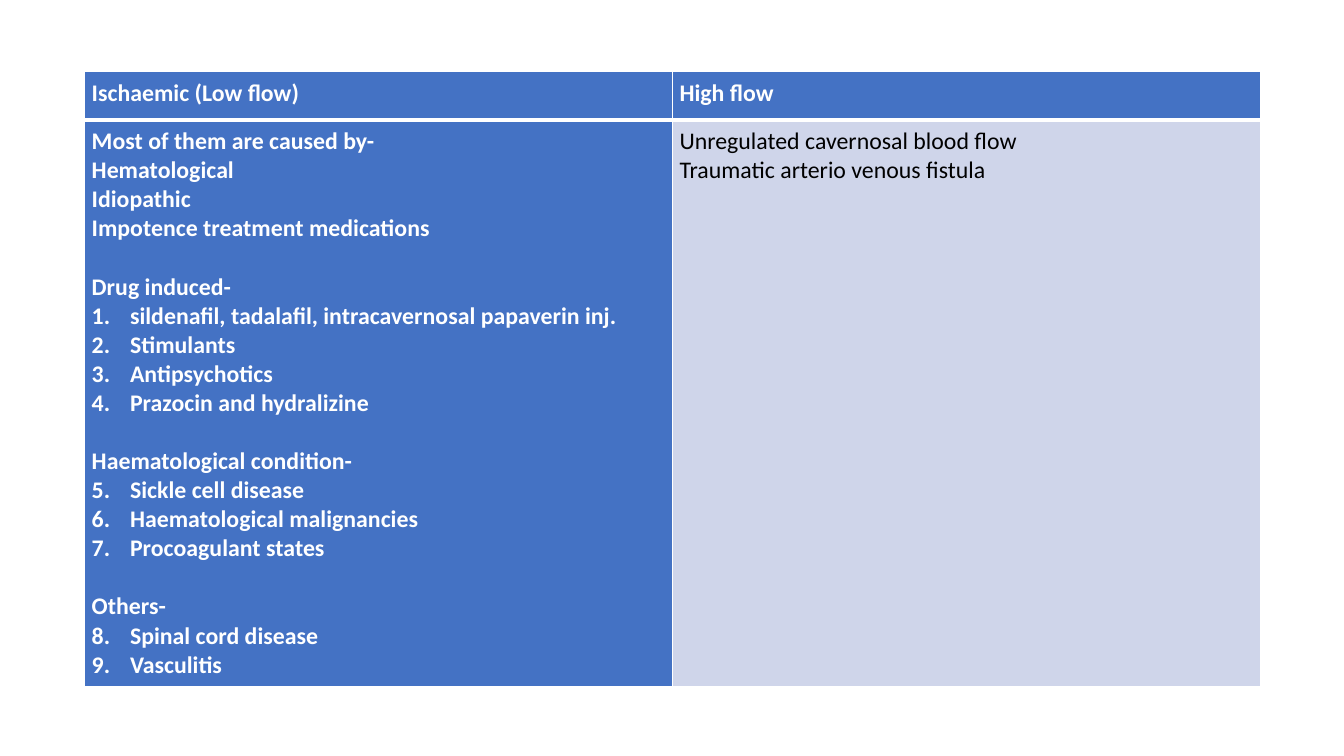
from dataclasses import dataclass
from lxml.etree import SubElement
from pptx import Presentation
from pptx.dml.color import RGBColor as Color
from pptx.oxml import parse_xml
from pptx.oxml.ns import nsdecls, qn
from pptx.util import Inches, Pt


@dataclass
class Theme:
    font: str = "Calibri"
    size: float = 17
    group_gap: float = 20.75
    thin: float = 1
    thick: float = 3
    blue: str = "4472C4"
    pale: str = "CFD5EA"
    white: str = "FFFFFF"
    black: str = "000000"


theme = Theme()


def add_line(cell, index, text, color, bold):
    frame = cell.text_frame
    para = frame.paragraphs[0] if index == 0 else frame.add_paragraph()
    span = para.add_run()
    span.text = text
    span.font.name = theme.font
    span.font.size = Pt(theme.size)
    span.font.bold = bold
    span.font.color.rgb = Color.from_string(color)
    return para


def style_cell(cell, fill, top, bottom):
    cell.margin_left = cell.margin_right = Inches(0.07)
    cell.margin_top = cell.margin_bottom = Inches(0.07)
    cell.fill.solid()
    cell.fill.fore_color.rgb = Color.from_string(fill)
    properties = cell._tc.get_or_add_tcPr()
    borders = {"lnL": theme.thin, "lnR": theme.thin, "lnT": top, "lnB": bottom}
    for position, (side, width) in enumerate(borders.items()):
        properties.insert(position, parse_xml(
            f'<a:{side} {nsdecls("a")} w="{Pt(width)}"><a:solidFill>'
            f'<a:srgbClr val="{theme.white}"/></a:solidFill></a:{side}>'))


headings = ["Ischaemic (Low flow)", "High flow"]
ischaemic_groups = [
    ("Most of them are caused by-",
     ["Hematological", "Idiopathic", "Impotence treatment medications"], False),
    ("Drug induced-",
     ["sildenafil, tadalafil, intracavernosal papaverin inj.", "Stimulants",
      "Antipsychotics", "Prazocin and hydralizine"], True),
    ("Haematological condition-",
     ["Sickle cell disease", "Haematological malignancies", "Procoagulant states"], True),
    ("Others-", ["Spinal cord disease", "Vasculitis"], True),
]
high_flow_causes = ["Unregulated cavernosal blood flow", "Traumatic arterio venous fistula"]

deck = Presentation()
deck.slide_width = Inches(13.33)
deck.slide_height = Inches(7.5)
page = deck.slides.add_slide(deck.slide_layouts[6])

table = page.shapes.add_table(
    2, 2, Inches(0.84), Inches(0.71), Inches(11.66), Inches(6.09)).table
table.horz_banding = False
for column in table.columns:
    column.width = Inches(5.83)
for row, height in zip(table.rows, (0.48, 5.61)):
    row.height = Inches(height)

for column, heading in enumerate(headings):
    cell = table.cell(0, column)
    style_cell(cell, theme.blue, theme.thin, theme.thick)
    add_line(cell, 0, heading, theme.white, True)

ischaemic, high_flow = table.cell(1, 0), table.cell(1, 1)
style_cell(ischaemic, theme.blue, theme.thick, theme.thin)
style_cell(high_flow, theme.pale, theme.thick, theme.thin)

line = 0
number = 1
for title, causes, numbered in ischaemic_groups:
    para = add_line(ischaemic, line, title, theme.white, True)
    if line:
        para.space_before = Pt(theme.group_gap)
    line += 1
    start = number
    for cause in causes:
        para = add_line(ischaemic, line, cause, theme.white, True)
        line += 1
        if numbered:
            properties = para._p.get_or_add_pPr()
            properties.set("marL", str(Inches(0.38)))
            properties.set("indent", str(-Inches(0.38)))
            SubElement(properties, qn("a:buFont"), typeface="+mj-lt")
            SubElement(properties, qn("a:buAutoNum"), type="arabicPeriod", startAt=str(start))
            number += 1

for line, cause in enumerate(high_flow_causes):
    add_line(high_flow, line, cause, theme.black, False)

deck.save("out.pptx")
